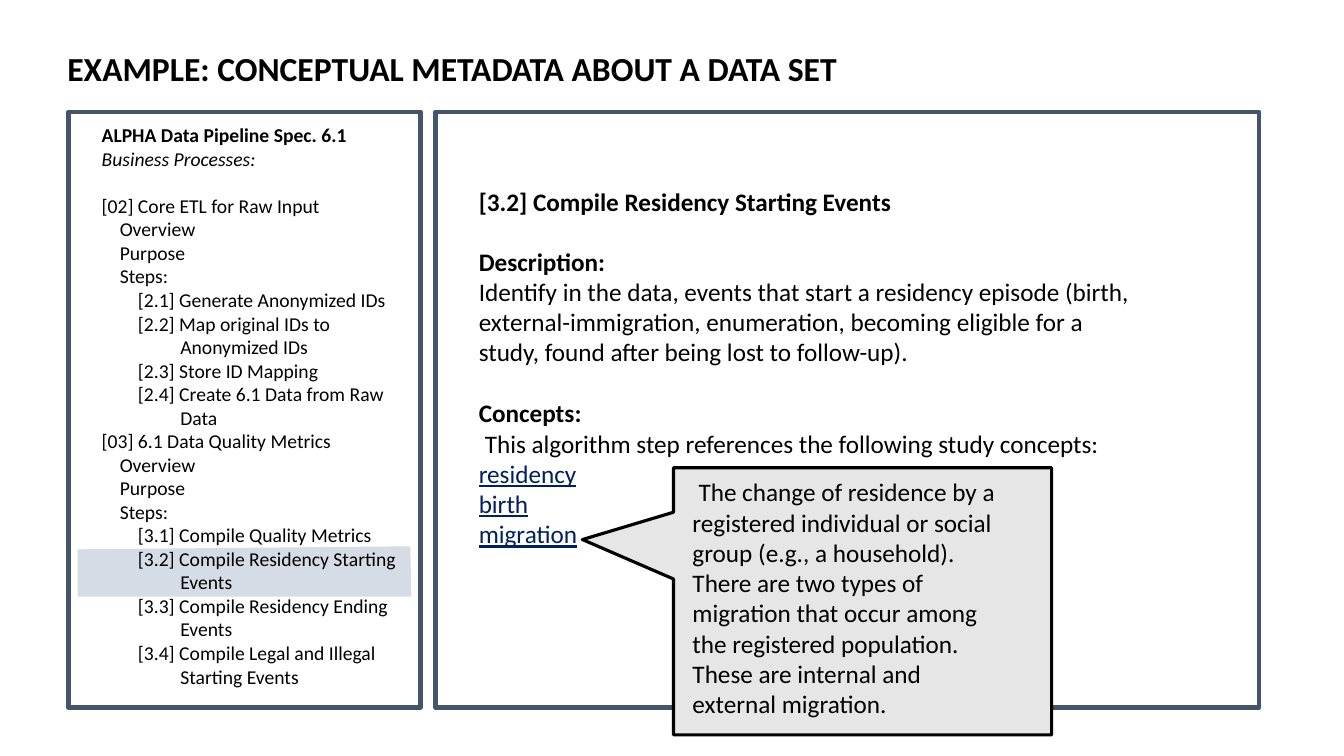
from pptx import Presentation
from pptx.dml.color import RGBColor
from pptx.enum import shapes, text
from pptx.util import Inches, Pt

THEME = {
    "font": "Calibri",
    "title": 24, "body": 18, "outline": 14,
    "ink": "000000", "link": "002060", "paper": "FFFFFF",
    "frame": "44546A", "highlight": "D6DCE5", "callout": "E7E6E6",
}

TITLE = "EXAMPLE: CONCEPTUAL METADATA ABOUT A DATA SET"

# (level, text): 0 process, 1 section, 2 numbered step
PROCESSES = [
    (0, "[02] Core ETL for Raw Input"),
    (1, "Overview"),
    (1, "Purpose"),
    (1, "Steps:"),
    (2, "[2.1] Generate Anonymized IDs"),
    (2, "[2.2] Map original IDs to Anonymized IDs"),
    (2, "[2.3] Store ID Mapping"),
    (2, "[2.4] Create 6.1 Data from Raw Data"),
    (0, "[03] 6.1 Data Quality Metrics"),
    (1, "Overview"),
    (1, "Purpose"),
    (1, "Steps:"),
    (2, "[3.1] Compile Quality Metrics"),
    (2, "[3.2] Compile Residency Starting Events"),
    (2, "[3.3] Compile Residency Ending Events"),
    (2, "[3.4] Compile Legal and Illegal Starting Events"),
]
LEVEL_INDENTS = [(0, 0), (0.18, 0), (0.78, -0.42)]  # left margin, first line
SPACE_INDENT = (0, 0.06)

BOLD, ITALIC = {"bold": True}, {"italic": True}
LINK = {"underline": True, "color": THEME["link"]}

# Each paragraph: runs, then optional indent and space before in points
OUTLINE = [
    {"runs": [("ALPHA Data Pipeline Spec. 6.1", BOLD)]},
    {"runs": [("Business Processes:", ITALIC)]},
] + [
    {"runs": [(line, {})], "indent": LEVEL_INDENTS[level], "before": 0 if i else 17}
    for i, (level, line) in enumerate(PROCESSES)
]
STEP = [{"runs": [("[3.2] Compile Residency Starting Events", BOLD)]}]
DETAILS = [
    {"runs": [("Description:", BOLD)]},
    {"runs": [("Identify in the data, events that start a residency episode (birth, "
               "external-immigration, enumeration, becoming eligible for a study, "
               "found after being lost to follow-up).", {})]},
    {"runs": [("Concepts:", BOLD)], "before": 22},
    {"runs": [("This algorithm step references the following study concepts: ", {}),
              ("residency", LINK)], "indent": SPACE_INDENT},
    {"runs": [("birth", LINK)]},
    {"runs": [("migration", LINK)]},
]
DEFINITION = [
    {"runs": [("The change of residence by a registered individual or social group "
               "(e.g., a household). There are two types of migration that occur among "
               "the registered population. These are internal and external migration.",
               {})], "indent": SPACE_INDENT},
]

PANEL_TOP, PANEL_HEIGHT = 1.11, 5.91
PANELS = [(0.68, 3.49), (4.32, 8.17)]  # left, width
HIGHLIGHT = [(407, 542), (77, 545), (77, 592), (408, 592)]  # hundredths of an inch
CALLOUT = (6.68, 4.64, 3.75, 2.65)
CALLOUT_TIP = (-0.741, -0.231)

TEXTS = [  # box, size, paragraphs, wrap
    ((0.91, 1.17, 3.14, 6.23), THEME["outline"], OUTLINE, True),
    ((4.65, 1.8, 6.69, 0.4), THEME["body"], STEP, True),
    ((4.65, 2.39, 6.69, 3.13), THEME["body"], DETAILS, True),
    ((6.77, 4.68, 3.34, 2.52), THEME["body"], DEFINITION, True),
    ((0.57, 0.43, 7.9, 0.5), THEME["title"], [{"runs": [(TITLE, BOLD)]}], False),
]


def paint(sp, fill, line=None, width=0):
    sp.shadow.inherit = False
    sp.fill.solid()
    sp.fill.fore_color.rgb = RGBColor.from_string(fill)
    if line:
        sp.line.color.rgb = RGBColor.from_string(line)
        sp.line.width = Pt(width)
    else:
        sp.line.fill.background()


def add_shape(slide, kind, box, *style):
    sp = slide.shapes.add_shape(kind, *map(Inches, box))
    paint(sp, *style)
    return sp


def add_run(p, words, size, style):
    r = p.add_run()
    r.text = words
    values = {"name": THEME["font"], "size": Pt(size), **style}
    r.font.color.rgb = RGBColor.from_string(values.pop("color", THEME["ink"]))
    for name, value in values.items():
        setattr(r.font, name, value)


def add_text(slide, box, size, paragraphs, wrap):
    tf = slide.shapes.add_textbox(*map(Inches, box)).text_frame
    tf.word_wrap = wrap
    tf.auto_size = text.MSO_AUTO_SIZE.SHAPE_TO_FIT_TEXT
    for i, item in enumerate(paragraphs):
        p = tf.add_paragraph() if i else tf.paragraphs[0]
        left, first = item.get("indent", (0, 0))
        pPr = p._p.get_or_add_pPr()
        pPr.set("marL", str(Inches(left)))
        pPr.set("indent", str(Inches(first)))
        p.space_before = Pt(item.get("before", 0))
        for words, style in item["runs"]:
            add_run(p, words, size, style)


def main():
    prs = Presentation()
    prs.slide_width, prs.slide_height = Inches(13.33), Inches(7.5)
    slide = prs.slides.add_slide(prs.slide_layouts[6])

    for left, width in PANELS:
        add_shape(slide, shapes.MSO_SHAPE.RECTANGLE, (left, PANEL_TOP, width, PANEL_HEIGHT),
                  THEME["paper"], THEME["frame"], 3)

    outline = slide.shapes.build_freeform(*HIGHLIGHT[0], scale=Inches(0.01))
    outline.add_line_segments(HIGHLIGHT[1:], close=True)
    paint(outline.convert_to_shape(), THEME["highlight"])

    *panel_texts, definition, title = TEXTS
    for entry in panel_texts:
        add_text(slide, *entry)

    callout = add_shape(slide, shapes.MSO_SHAPE.RECTANGULAR_CALLOUT, CALLOUT,
                        THEME["callout"], THEME["ink"], 2.25)
    for i, offset in enumerate(CALLOUT_TIP):
        callout.adjustments[i] = offset
    for entry in (definition, title):
        add_text(slide, *entry)

    prs.save("out.pptx")


if __name__ == "__main__":
    main()
